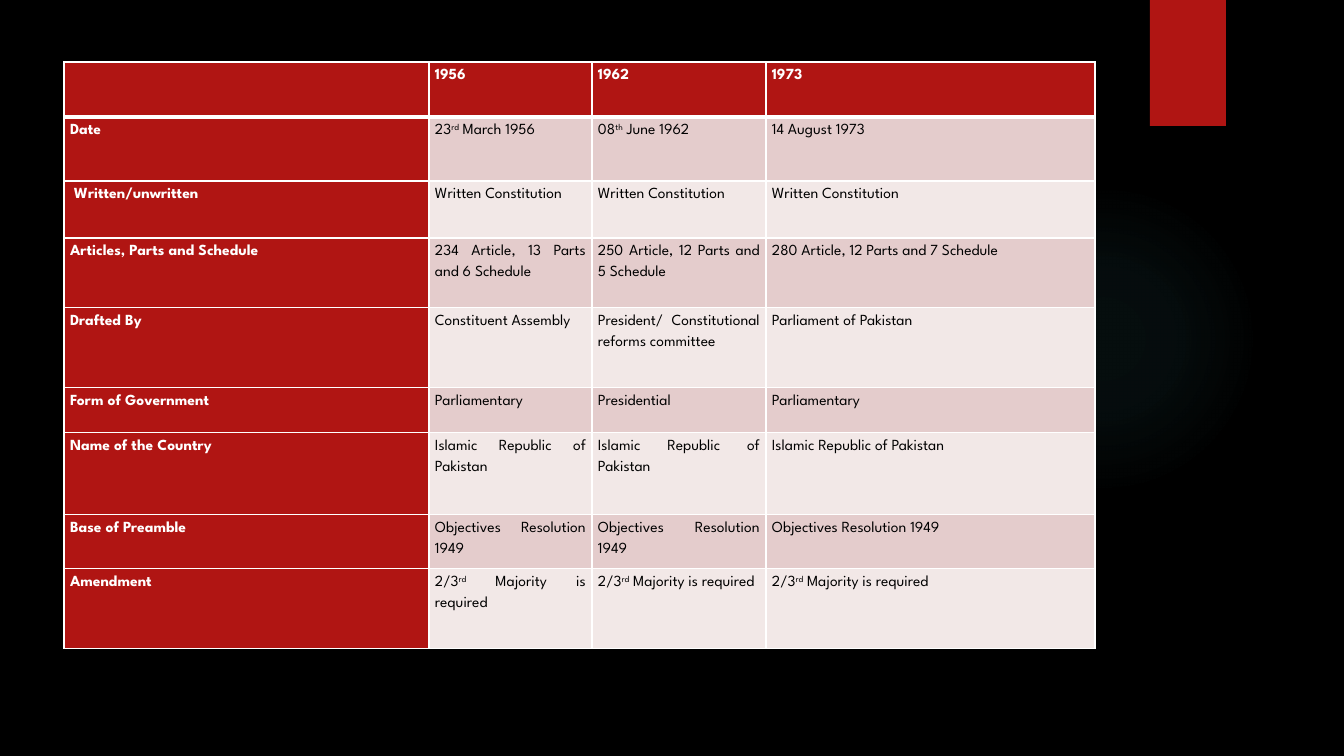
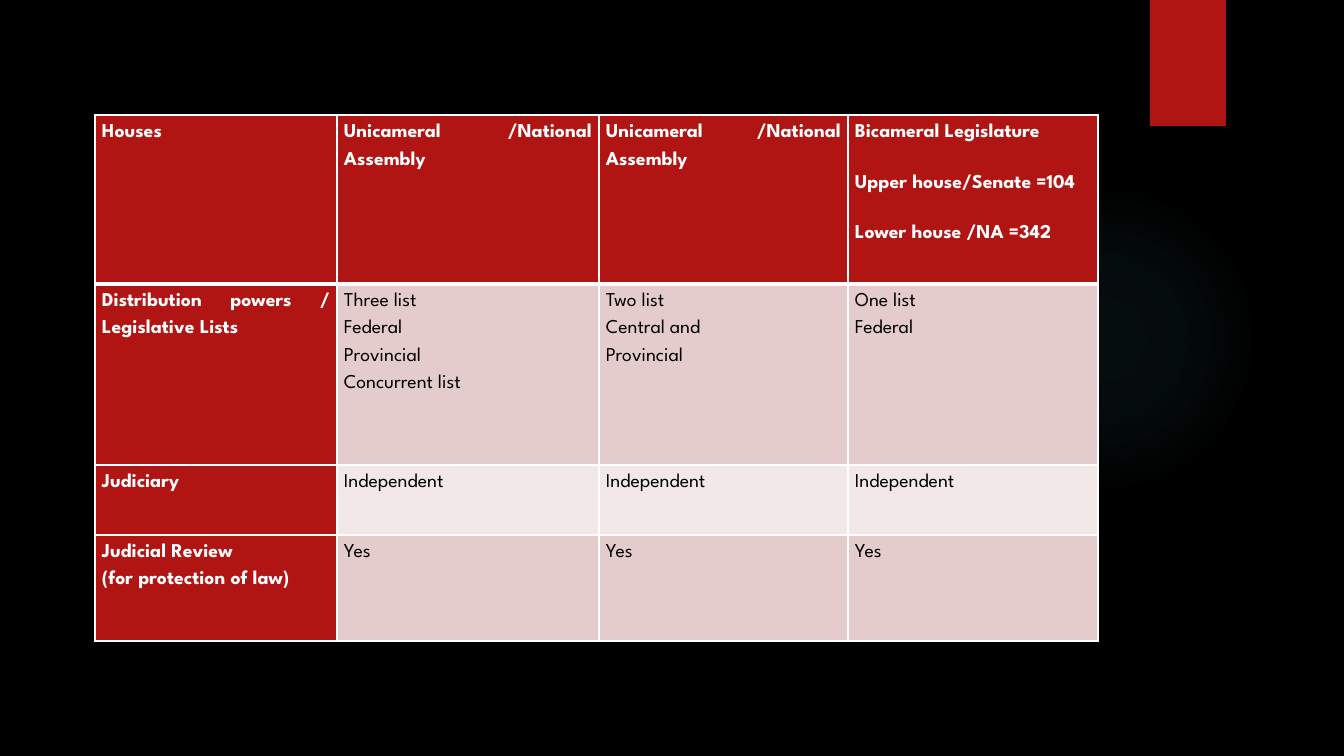
from lxml.etree import SubElement
from pptx import Presentation
from pptx.dml.color import RGBColor
from pptx.enum.shapes import MSO_SHAPE
from pptx.enum.text import PP_ALIGN
from pptx.oxml import parse_xml
from pptx.oxml.ns import nsdecls, qn
from pptx.util import Emu, Pt

SCALE = 914400 / 100.8
FONT = "League Spartan"
BLACK = RGBColor(0x00, 0x00, 0x00)
WHITE = RGBColor(0xFF, 0xFF, 0xFF)
RED = RGBColor(0xB0, 0x15, 0x13)
ROSE = RGBColor(0xE4, 0xCC, 0xCC)
BLUSH = RGBColor(0xF2, 0xE8, 0xE7)
TEAL = RGBColor(0x50, 0xB9, 0xC1)
GLOW_STOPS = ((0, 7), (36, 6), (69, 0))

CONSTITUTIONS = (
    ("", "1956", "1962", "1973"),
    ("Date", "23^rd^ March 1956", "08^th^ June 1962", "14 August 1973"),
    ("Written/unwritten",) + ("Written Constitution",) * 3,
    ("Articles, Parts and Schedule", "234 Article, 13 Parts and 6 Schedule",
     "250 Article, 12 Parts and 5 Schedule", "280 Article, 12 Parts and 7 Schedule"),
    ("Drafted By", "Constituent Assembly",
     "President/ Constitutional reforms committee", "Parliament of Pakistan"),
    ("Form of Government", "Parliamentary", "Presidential", "Parliamentary"),
    ("Name of the Country",) + ("Islamic Republic of Pakistan",) * 3,
    ("Base of Preamble",) + ("Objectives Resolution 1949",) * 3,
    ("Amendment",) + ("2/3^rd^ Majority is required",) * 3,
)
INSTITUTIONS = (
    ("Houses", "Unicameral /National Assembly", "Unicameral /National Assembly",
     "Bicameral Legislature\nUpper house/Senate =104\nLower house /NA =342"),
    ("Distribution powers / Legislative Lists",
     "Three list\nFederal\nProvincial\nConcurrent list",
     "Two list\nCentral and\nProvincial", "One list\nFederal"),
    ("Judiciary",) + ("Independent",) * 3,
    ("Judicial Review\n(for protection of law)",) + ("Yes",) * 3,
)


def px(length):
    """Turn pixels into EMU."""
    return Emu(round(length * SCALE))


def add_plain_shape(page, kind, box):
    """Add a shape without line or shadow."""
    shape = page.shapes.add_shape(kind, *map(px, box))
    shape.shadow.inherit = False
    shape.line.fill.background()
    return shape


def add_backdrop(page):
    """Draw the black background, teal glow and red tab."""
    page.background.fill.solid()
    page.background.fill.fore_color.rgb = BLACK
    glow = add_plain_shape(page, MSO_SHAPE.OVAL, (949, 184, 310, 310))
    stops = "".join(
        f'<a:gs pos="{place * 1000}"><a:srgbClr val="{TEAL}">'
        f'<a:alpha val="{alpha * 1000}"/></a:srgbClr></a:gs>'
        for place, alpha in GLOW_STOPS)
    gradient = parse_xml(
        f'<a:gradFill {nsdecls("a")}><a:gsLst>{stops}</a:gsLst><a:path path="circle">'
        '<a:fillToRect l="50000" t="50000" r="50000" b="50000"/></a:path></a:gradFill>')
    glow._element.spPr.find(qn("a:prstGeom")).addnext(gradient)
    tab = add_plain_shape(page, MSO_SHAPE.RECTANGLE, (1150, 0, 76, 126))
    tab.fill.solid()
    tab.fill.fore_color.rgb = RED


def set_borders(cell, **widths):
    """Give the cell white borders of the given widths in points."""
    properties = cell._tc.get_or_add_tcPr()
    for side in "LRTB":
        line = SubElement(properties, qn(f"a:ln{side}"), w=str(Pt(widths.get(side, 1))))
        fill = SubElement(line, qn("a:solidFill"))
        SubElement(fill, qn("a:srgbClr"), val=str(WHITE))


def write_text(frame, text, *, size, color, bold, gap):
    """Write justified paragraphs, with superscripts between carets."""
    for index, line in enumerate(text.split("\n")):
        para = frame.add_paragraph() if index else frame.paragraphs[0]
        para.alignment = PP_ALIGN.JUSTIFY
        para.line_spacing = 1.5
        if index:
            para.space_before = Pt(gap)
        para.font.size = Pt(size)
        for part, words in enumerate(line.split("^")):
            span = para.add_run()
            span.text = words
            span.font.name = FONT
            span.font.size = Pt(size)
            span.font.bold = bold
            span.font.color.rgb = color
            if part % 2:
                span._r.get_or_add_rPr().set("baseline", "30000")


def add_comparison(page, rows, *, left, top, widths, heights, size, inset, header_gap=0):
    """Add a table with a red header row, red first column and banded body."""
    table = page.shapes.add_table(
        len(rows), len(widths), px(left), px(top),
        px(sum(widths)), px(sum(heights))).table
    for column, width in zip(table.columns, widths):
        column.width = px(width)
    for row, height in zip(table.rows, heights):
        row.height = px(height)
    for r, texts in enumerate(rows):
        for c, text in enumerate(texts):
            cell = table.cell(r, c)
            heading = r == 0 or c == 0
            cell.margin_left = cell.margin_right = px(inset)
            cell.margin_top = cell.margin_bottom = 0
            set_borders(cell, T=3 if r == 1 else 1, B=3 if r == 0 else 1)
            cell.fill.solid()
            cell.fill.fore_color.rgb = RED if heading else ROSE if r % 2 else BLUSH
            write_text(cell.text_frame, text, size=size, bold=heading,
                       color=WHITE if heading else BLACK,
                       gap=header_gap if r == 0 else 0)
    return table


def add_page(deck):
    """Add a blank slide with the shared backdrop."""
    page = deck.slides.add_slide(deck.slide_layouts[6])
    add_backdrop(page)
    return page


def main():
    """Build and save the deck."""
    deck = Presentation()
    deck.slide_width, deck.slide_height = px(1344), px(756)
    table = add_comparison(
        add_page(deck), CONSTITUTIONS, left=64, top=62, size=11, inset=6,
        widths=(365, 163, 174, 329), heights=(55, 64, 57, 70, 80, 45, 82, 54, 80))
    table.cell(2, 0).margin_left = px(10)
    add_comparison(
        add_page(deck), INSTITUTIONS, left=95, top=115, size=14, inset=7, header_gap=16.5,
        widths=(242, 262, 249, 250), heights=(169, 181, 70, 106))
    deck.save("out.pptx")


if __name__ == "__main__":
    main()
